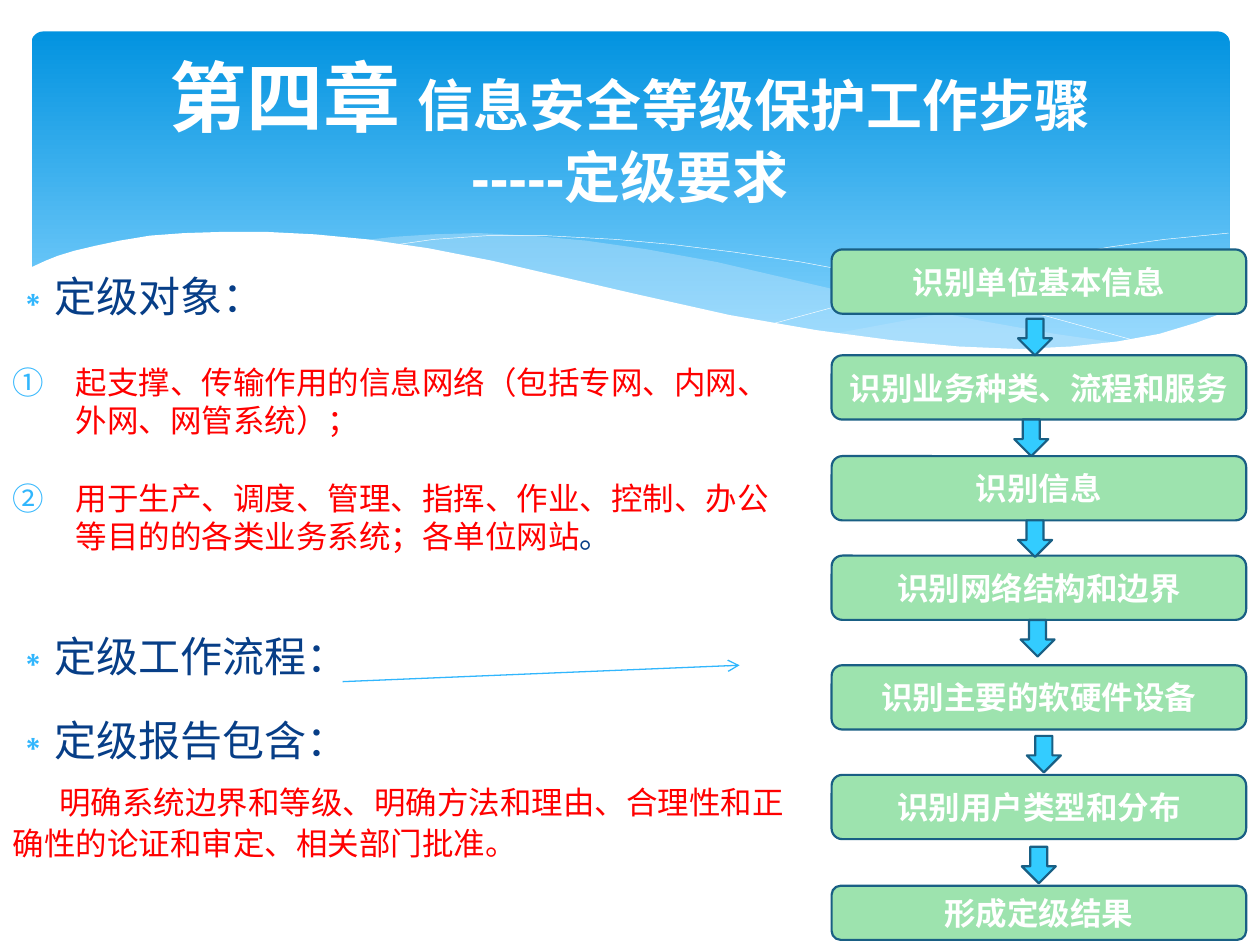
from lxml import etree
from pptx import Presentation
from pptx.dml.color import RGBColor
from pptx.enum.shapes import MSO_CONNECTOR, MSO_SHAPE
from pptx.enum.text import MSO_ANCHOR, MSO_AUTO_SIZE, PP_ALIGN
from pptx.oxml.ns import qn
from pptx.util import Inches, Pt

ROUNDED, STEP_BOX, DOWN_ARROW = (
    MSO_SHAPE.ROUNDED_RECTANGLE, MSO_SHAPE.FLOWCHART_ALTERNATE_PROCESS, MSO_SHAPE.DOWN_ARROW)
STRAIGHT = MSO_CONNECTOR.STRAIGHT
MIDDLE, NO_FIT = MSO_ANCHOR.MIDDLE, MSO_AUTO_SIZE.NONE
CENTER, LEFT = PP_ALIGN.CENTER, PP_ALIGN.LEFT

THEME = {
    "white": "FFFFFF", "navy": "073E87", "red": "FF0000", "accent": "31B6FD",
    "banner_top": "0293E0", "banner_bottom": "83D3FE", "wave": "C6E7FC",
    "step": "9DE3AE", "arrow": "33CCFF", "outline": "195F84",
    "latin": "Cabin", "title_latin": "Arial", "east_asian": "Noto Sans CJK JP",
    "chapter": 44, "title": 32, "heading": 24, "text": 18,
}

# Title lines: (text, size, font)
TITLE = [
    [("第四章 ", "chapter", "title_latin"), ("信息安全等级保护工作步骤", "title", "title_latin")],
    [("-----", "title", "title_latin"), ("定级要求", "title", "east_asian")],
]

# Paragraph kinds: size, left margin, first-line indent, bullet
KINDS = {
    "heading": ("heading", 0.3, -0.3, ("buChar", {"char": "∗"})),
    "item": ("text", 0.5, -0.5, ("buAutoNum", {"type": "circleNumDbPlain"})),
    "plain": ("text", 0, 0.37, ("buNone", {})),
}
# (kind, line spacing, points before, runs)
BODY = [
    ("heading", 1.0, 0, [("定级对象：", "navy")]),
    ("item", 1.0, 24, [("起支撑、传输作用的信息网络（包括专网、内网、外网、网管系统）；", "red")]),
    ("item", 1.0, 23, [("用于生产、调度、管理、指挥、作业、控制、办公等目的的各类业务系统；各单位网站", "red"),
                       ("。", "navy")]),
    ("heading", 1.5, 29, [("定级工作流程：", "navy")]),
    ("heading", 1.5, 4.8, [("定级报告包含：", "navy")]),
    ("plain", 1.07, 9, [("明确系统边界和等级、明确方法和理由、合理性和正确性的论证和审定、相关部门批准。", "red")]),
]

# (text, top, height)
STEPS = [
    ("识别单位基本信息", 1.98, 0.51), ("识别业务种类、流程和服务", 2.82, 0.51),
    ("识别信息", 3.62, 0.51), ("识别网络结构和边界", 4.41, 0.51),
    ("识别主要的软硬件设备", 5.28, 0.51), ("识别用户类型和分布", 6.15, 0.51),
    ("形成定级结果", 7.03, 0.43),
]
STEP_LEFT, STEP_WIDTH = 6.6, 3.29
ARROWS = [(8.08, 2.53), (8.05, 3.33), (8.08, 4.13), (8.1, 4.92), (8.15, 5.84), (8.11, 6.72)]
ARROW_WIDTH, ARROW_HEIGHT = 0.27, 0.29

RIGHT_WAVE = [
    (9.76, 2), (9.35, 2.07), (8.91, 2.16), (8.32, 2.3), (7.53, 2.48), (6.61, 2.65), (7.05, 2.71),
    (7.57, 2.76), (8.14, 2.78), (8.63, 2.75), (9.05, 2.69), (9.42, 2.59), (9.76, 2.47)]
MIDDLE_WAVE = [
    (8.93, 2.73), (8.37, 2.65), (7.75, 2.54), (7.06, 2.4), (6.29, 2.22), (5.69, 2.08), (5.14, 1.98),
    (4.65, 1.91), (4.2, 1.87), (3.8, 1.85), (3.44, 1.86), (3.13, 1.88), (2.86, 1.91), (3.23, 1.96),
    (3.83, 2.07), (4.49, 2.22), (5.3, 2.4), (6.01, 2.55), (6.65, 2.66), (7.22, 2.74), (7.73, 2.77),
    (8.18, 2.78), (8.57, 2.77)]
LEFT_CURVE = [
    (3.09, 1.95), (3.44, 1.9), (3.87, 1.87), (4.33, 1.87), (4.89, 1.9), (5.33, 1.94), (5.82, 2),
    (6.36, 2.08), (6.95, 2.19), (7.6, 2.33), (8.31, 2.51), (9.07, 2.72)]
RIGHT_CURVE = [
    (6.13, 2.57), (6.72, 2.41), (7.2, 2.29), (7.76, 2.16), (8.36, 2.04), (8.81, 1.96),
    (9.24, 1.9), (9.75, 1.85)]
WHITE_WAVE = [
    (9.77, 2.46), (9.5, 2.56), (9.2, 2.65), (8.87, 2.71), (8.5, 2.75), (8.09, 2.77), (7.61, 2.75),
    (7.08, 2.7), (6.48, 2.62), (5.79, 2.5), (5.03, 2.33), (4.47, 2.2), (3.91, 2.07), (3.4, 1.97),
    (2.92, 1.9), (2.5, 1.86), (2.11, 1.84), (1.77, 1.84), (1.46, 1.85), (1.19, 1.87), (0.95, 1.91),
    (0.76, 1.95), (0.59, 1.99), (0.46, 2.03), (0.36, 2.07), (0.23, 2.13), (0.23, 3.29), (9.77, 3.29)]


def color(name):
    return RGBColor.from_string(THEME[name])


def inches(*lengths):
    return [Inches(length) for length in lengths]


def paint(shape, fill=None, line=None, width=1.25, opacity=None):
    shape.shadow.inherit = False
    if fill:
        shape.fill.solid()
        shape.fill.fore_color.rgb = color(fill)
        if opacity:
            tint = shape.fill._xPr.find(".//" + qn("a:srgbClr"))
            etree.SubElement(tint, qn("a:alpha"), val=str(opacity * 1000))
    else:
        shape.fill.background()
    if line:
        shape.line.color.rgb = color(line)
        shape.line.width = Pt(width)
    else:
        shape.line.fill.background()


def add_span(para, text, size, tone, bold=False, latin="latin"):
    span = para.add_run()
    span.text = text
    span.font.size = Pt(THEME[size])
    span.font.bold = bold
    span.font.color.rgb = color(tone)
    span.font.name = THEME[latin]
    east_asian = etree.Element(qn("a:ea"), typeface=THEME["east_asian"])
    span.font._element.find(qn("a:latin")).addnext(east_asian)


def add_outline(page, points, closed=True, **look):
    start, *others = [inches(*point) for point in points]
    builder = page.shapes.build_freeform(*start)
    builder.add_line_segments(others, close=closed)
    paint(builder.convert_to_shape(), **look)


def add_banner(page):
    banner = page.shapes.add_shape(ROUNDED, *inches(0.25, 0.25, 9.51, 2.7))
    banner.adjustments[0] = 0.034
    paint(banner)
    banner.fill.gradient()
    banner.fill.gradient_angle = 270
    stops = zip(banner.fill.gradient_stops, [("banner_top", 0), ("banner_bottom", 0.9)])
    for stop, (tone, position) in stops:
        stop.color.rgb = color(tone)
        stop.position = position
    add_outline(page, RIGHT_WAVE, fill="wave", opacity=29)
    add_outline(page, MIDDLE_WAVE, fill="wave", opacity=40)
    for curve in (LEFT_CURVE, RIGHT_CURVE):
        add_outline(page, curve, closed=False, line="white", width=0.25)
    add_outline(page, WHITE_WAVE, fill="white")


def place(page, box, *bounds):
    """Position a placeholder and bring it in front of what is drawn so far."""
    box.left, box.top, box.width, box.height = inches(*bounds)
    box.text_frame.word_wrap = True
    box.text_frame.auto_size = NO_FIT
    page.shapes._spTree.append(box._element)


def fill_title(box):
    frame = box.text_frame
    frame.vertical_anchor = MIDDLE
    frame.margin_bottom = Inches(0.1)
    para = frame.paragraphs[0]
    para.alignment = CENTER
    para.line_spacing = 1.0
    for number, line in enumerate(TITLE):
        if number:
            para.add_line_break()
        for text, size, latin in line:
            add_span(para, text, size, "white", True, latin)


def fill_body(box):
    frame = box.text_frame
    for number, (kind, spacing, before, spans) in enumerate(BODY):
        para = frame.add_paragraph() if number else frame.paragraphs[0]
        size, margin, indent, (bullet, settings) = KINDS[kind]
        para.alignment = LEFT
        para.line_spacing = spacing
        para.space_before = Pt(before)
        properties = para._p.get_or_add_pPr()
        properties.set("marL", str(Inches(margin)))
        properties.set("indent", str(Inches(indent)))
        tint = etree.SubElement(properties, qn("a:buClr"))
        etree.SubElement(tint, qn("a:srgbClr"), val=THEME["accent"])
        etree.SubElement(properties, qn("a:" + bullet), settings)
        for text, tone in spans:
            add_span(para, text, size, tone)


def add_steps(page):
    for text, top, height in STEPS:
        box = page.shapes.add_shape(STEP_BOX, *inches(STEP_LEFT, top, STEP_WIDTH, height))
        paint(box, fill="step", line="outline")
        frame = box.text_frame
        frame.margin_left = frame.margin_right = Inches(0.05)
        frame.vertical_anchor = MIDDLE
        frame.paragraphs[0].alignment = CENTER
        add_span(frame.paragraphs[0], text, "text", "white", bold=True)
    for left, top in ARROWS:
        arrow = page.shapes.add_shape(DOWN_ARROW, *inches(left, top, ARROW_WIDTH, ARROW_HEIGHT))
        paint(arrow, fill="arrow", line="outline")


def add_pointer(page):
    pointer = page.shapes.add_connector(STRAIGHT, *inches(2.72, 5.41, 5.87, 5.28))
    pointer.line.color.rgb = color("accent")
    pointer.line.width = Pt(0.75)
    etree.SubElement(pointer.line._get_or_add_ln(), qn("a:tailEnd"), type="arrow")
    etree.SubElement(pointer._element.spPr, qn("a:effectLst"))


def main():
    deck = Presentation()
    deck.slide_width, deck.slide_height = inches(10, 7.5)
    page = deck.slides.add_slide(deck.slide_layouts[1])
    title, body = page.placeholders
    add_banner(page)
    place(page, title, 0.5, 0.37, 9, 1.37)
    fill_title(title)
    place(page, body, 0, 2.1, 6.42, 5.75)
    fill_body(body)
    add_steps(page)
    add_pointer(page)
    deck.save("out.pptx")


if __name__ == "__main__":
    main()
